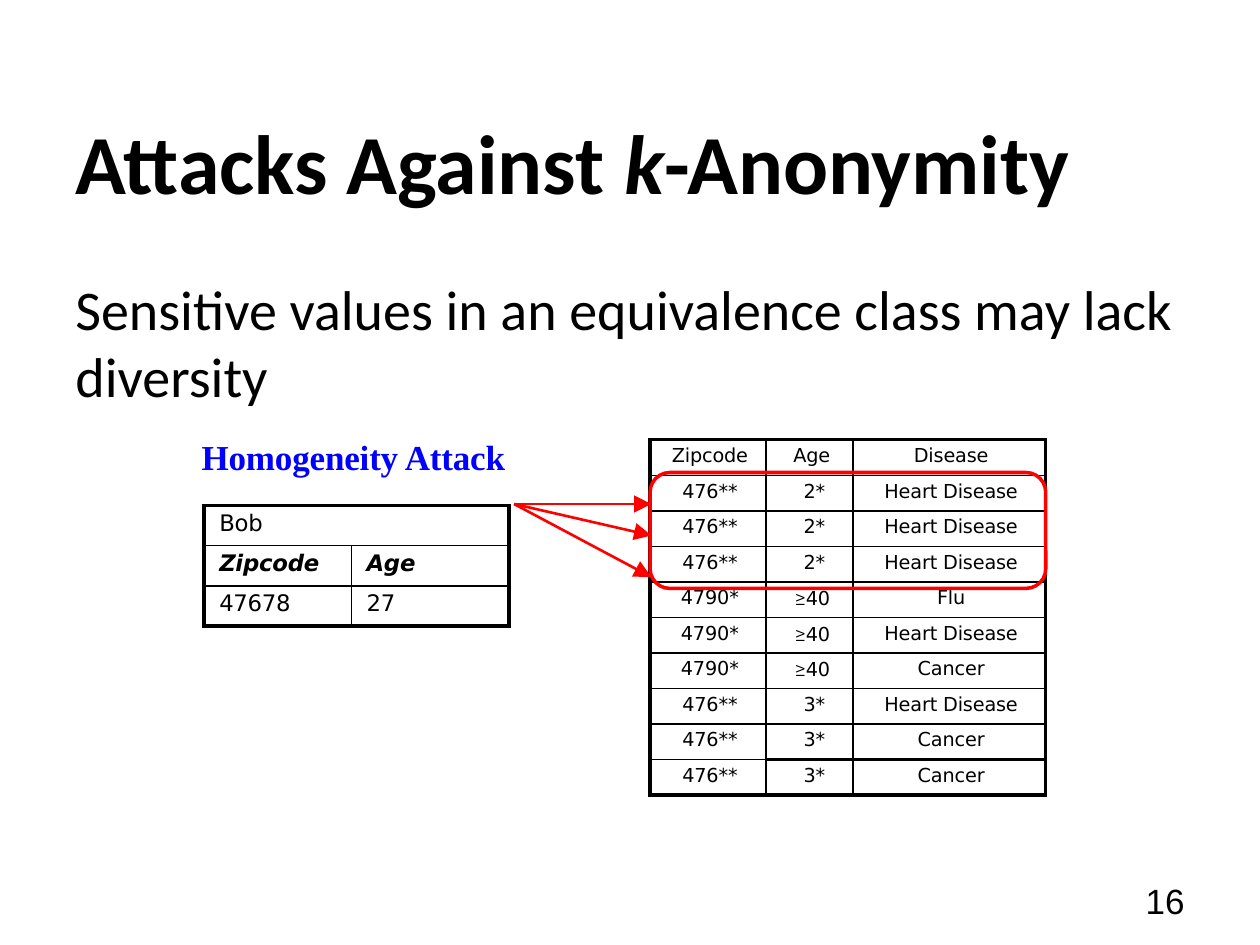
from lxml.etree import SubElement
from pptx import Presentation
from pptx.dml.color import RGBColor
from pptx.enum.shapes import MSO_CONNECTOR, MSO_SHAPE
from pptx.enum.text import MSO_ANCHOR, PP_ALIGN
from pptx.oxml import parse_xml
from pptx.oxml.ns import nsdecls, qn
from pptx.util import Inches, Pt

BLACK, RED, BLUE = "000000", "FF0000", "0000FF"
TABLE_FONT = "DejaVu Sans"
THICK, MEDIUM, THIN = 2.25, 1.5, 1

RELEASED = [
    ("Zipcode", "Age", "Disease"),
    ("476**", "2*", "Heart Disease"),
    ("476**", "2*", "Heart Disease"),
    ("476**", "2*", "Heart Disease"),
    ("4790*", "≥40", "Flu"),
    ("4790*", "≥40", "Heart Disease"),
    ("4790*", "≥40", "Cancer"),
    ("476**", "3*", "Heart Disease"),
    ("476**", "3*", "Cancer"),
    ("476**", "3*", "Cancer"),
]
KNOWN = [("Bob", ""), ("Zipcode", "Age"), ("47678", "27")]


def rgb(value):
    return RGBColor.from_string(value)


def format_run(run, size, font, color=BLACK, bold=False, italic=False, spacing=0):
    run.font.size = Pt(size)
    run.font.name = font
    run.font.color.rgb = rgb(color)
    run.font.bold = bold
    run.font.italic = italic
    if spacing:
        run._r.get_or_add_rPr().set("spc", str(round(spacing * 100)))


def format_paragraph(paragraph, align=PP_ALIGN.LEFT, before=0, indent=0):
    paragraph.alignment = align
    paragraph.space_before = Pt(before)
    properties = paragraph._p.get_or_add_pPr()
    properties.set("marL", str(Inches(indent)))
    properties.set("indent", "0")


def add_title(slide, parts):
    """Fill the title from (text, italic) pairs."""
    title = slide.shapes.title
    title.left, title.top = Inches(0.5), Inches(0.65)
    title.width, title.height = Inches(9), Inches(1.25)
    title.text_frame.vertical_anchor = MSO_ANCHOR.MIDDLE
    paragraph = title.text_frame.paragraphs[0]
    paragraph.alignment = PP_ALIGN.LEFT
    for text, italic in parts:
        run = paragraph.add_run()
        run.text = text
        format_run(run, 48, "Calibri", bold=True, italic=italic)


def add_text(slide, box, text, paragraph_style, **run_style):
    frame = slide.shapes.add_textbox(*map(Inches, box)).text_frame
    frame.word_wrap = True
    frame.text = text
    format_paragraph(frame.paragraphs[0], **paragraph_style)
    format_run(frame.paragraphs[0].runs[0], **run_style)
    return frame


def set_border(cell, side, width):
    """Draw one border; sides must be first set in the order L, R, T, B."""
    properties = cell._tc.get_or_add_tcPr()
    line = properties.find(qn(f"a:ln{side}"))
    if line is None:
        line = parse_xml(
            f'<a:ln{side} {nsdecls("a")}><a:solidFill>'
            f'<a:srgbClr val="{BLACK}"/></a:solidFill></a:ln{side}>'
        )
        properties.insert("LRTB".index(side), line)
    line.set("w", str(Pt(width)))


def add_grid(slide, left, top, widths, row_height, rows):
    """Add an unfilled table with a thick frame and thin inner lines."""
    size = (sum(widths), row_height * len(rows))
    table = slide.shapes.add_table(
        len(rows), len(widths), *map(Inches, (left, top, *size))
    ).table
    table.first_row = table.horz_banding = False
    for column, width in zip(table.columns, widths):
        column.width = Inches(width)
    for r, row in enumerate(rows):
        table.rows[r].height = Inches(row_height)
        for c, text in enumerate(row):
            cell = table.cell(r, c)
            cell.fill.background()
            cell.margin_left = cell.margin_right = cell.margin_bottom = 0
            cell.margin_top = Inches(0.04)
            if text:
                cell.text_frame.text = text
            on_frame = {
                "L": c == 0,
                "R": c == len(widths) - 1,
                "T": r == 0,
                "B": r == len(rows) - 1,
            }
            for side, outer in on_frame.items():
                set_border(cell, side, THICK if outer else THIN)
    return table


def add_known_table(slide):
    table = add_grid(slide, 1.62, 4.01, (1.17, 1.25), 0.32, KNOWN)
    table.cell(0, 0).merge(table.cell(0, 1))
    set_border(table.cell(0, 0), "R", THICK)
    for r, row in enumerate(KNOWN):
        for c, text in enumerate(row):
            if not text:
                continue
            paragraph = table.cell(r, c).text_frame.paragraphs[0]
            format_paragraph(paragraph, before=3.1, indent=0.12)
            is_label = r == 1
            format_run(paragraph.runs[0], 13, TABLE_FONT, bold=is_label,
                       italic=is_label, spacing=-0.1)


def add_released_table(slide):
    table = add_grid(slide, 5.16, 3.49, (0.92, 0.69, 1.53), 0.282, RELEASED)
    for r, row in enumerate(RELEASED):
        for c, text in enumerate(row):
            cell = table.cell(r, c)
            paragraph = cell.text_frame.paragraphs[0]
            if c == 1:
                cell.margin_right = Inches(0.22 if text.endswith("*") else 0.18)
                format_paragraph(paragraph, PP_ALIGN.RIGHT, before=3.1)
            else:
                format_paragraph(paragraph, PP_ALIGN.CENTER, before=3.1, indent=0.03)
            if text.startswith("≥"):
                paragraph.runs[0].text = text[1:]
                sign = paragraph.add_run()
                sign.text = text[0]
                format_run(sign, 11, "Montserrat")
                paragraph.runs[0]._r.addprevious(sign._r)
            format_run(paragraph.runs[-1], 11, TABLE_FONT, spacing=-0.1)
    for c in (1, 2):
        for r in (7, 8):
            set_border(table.cell(r, c), "B", MEDIUM)
            set_border(table.cell(r + 1, c), "T", MEDIUM)
        set_border(table.cell(9, c), "B", 3)


def add_arrow(slide, start, end):
    arrow = slide.shapes.add_connector(
        MSO_CONNECTOR.STRAIGHT, *map(Inches, (*start, *end))
    )
    arrow.line.color.rgb = rgb(RED)
    arrow.line.width = Pt(1.5)
    SubElement(arrow.line._get_or_add_ln(), qn("a:tailEnd"),
               type="triangle", w="lg", len="lg")
    SubElement(arrow._element.spPr, qn("a:effectLst"))


def add_class_outline(slide):
    outline = slide.shapes.add_shape(
        MSO_SHAPE.ROUNDED_RECTANGLE, *map(Inches, (5.16, 3.75, 3.14, 0.92))
    )
    outline.adjustments[0] = 0.17
    outline.shadow.inherit = False
    outline.fill.background()
    outline.line.color.rgb = rgb(RED)
    outline.line.width = Pt(2)


def main():
    deck = Presentation()
    deck.slide_width, deck.slide_height = Inches(10), Inches(7.5)
    slide = deck.slides.add_slide(deck.slide_layouts[5])

    add_title(slide, [("Attacks Against ", False), ("k", True), ("-Anonymity", False)])
    number = add_text(slide, (7.17, 6.95, 2.33, 0.4), "16",
                      {"align": PP_ALIGN.RIGHT}, size=20, font="Arial")
    number.vertical_anchor = MSO_ANCHOR.MIDDLE
    add_text(slide, (0.5, 2.13, 9.31, 4.62),
             "Sensitive values in an equivalence class may lack diversity",
             {"before": 20}, size=32, font="Calibri")
    add_released_table(slide)
    add_known_table(slide)
    for end_y in (4.58, 4, 4.25):
        add_arrow(slide, (4.08, 4), (5.17, end_y))
    add_class_outline(slide)
    heading = add_text(slide, (0.92, 3.45, 3.66, 0.35), "Homogeneity Attack",
                       {"before": 9.8, "indent": 0.68}, size=20,
                       font="Times New Roman", color=BLUE, bold=True, spacing=-0.1)
    heading.margin_left = heading.margin_right = heading.margin_bottom = 0
    heading.margin_top = Inches(0.01)

    deck.save("out.pptx")


if __name__ == "__main__":
    main()
